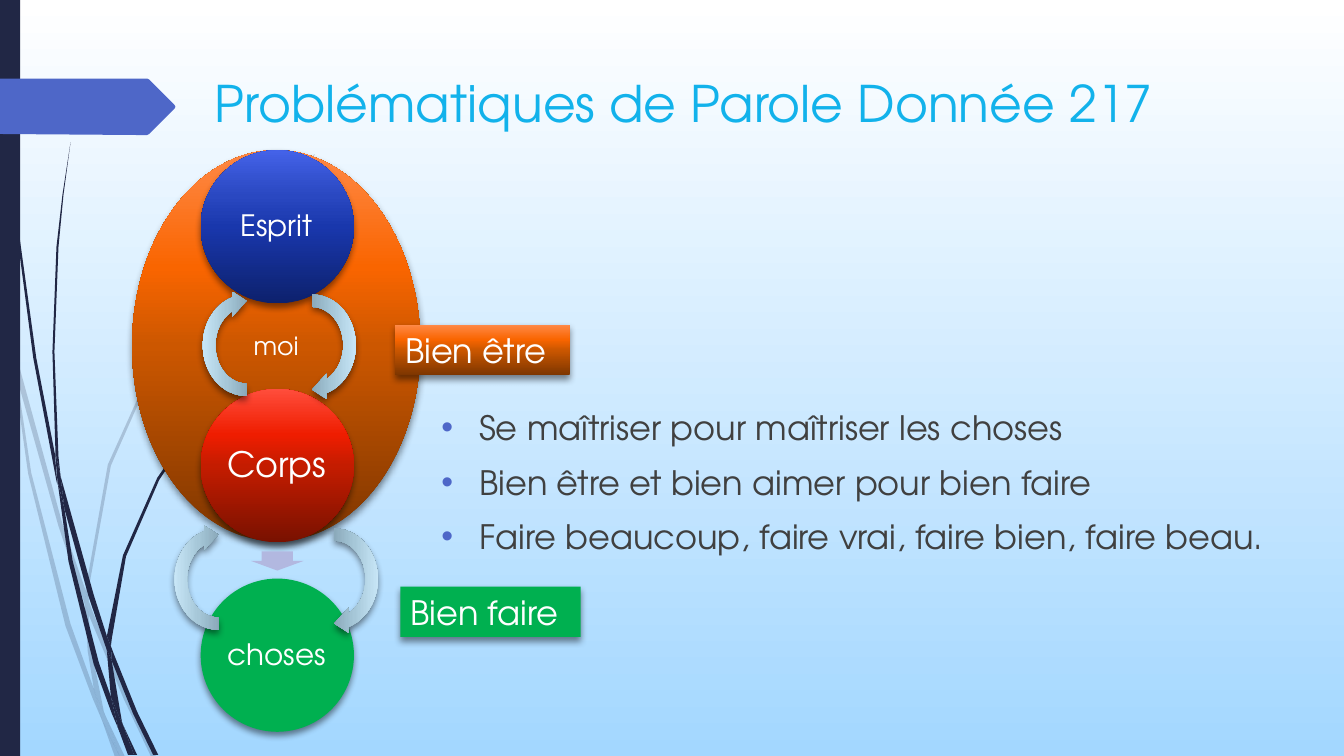
import copy

import pptx
import pptx.dml.color
import pptx.enum.shapes
import pptx.enum.text
import pptx.oxml
import pptx.oxml.ns
import pptx.util
from lxml import etree

RGB = pptx.dml.color.RGBColor
SHAPE = pptx.enum.shapes.MSO_SHAPE
ALIGN = pptx.enum.text.PP_ALIGN
ANCHOR = pptx.enum.text.MSO_ANCHOR
qn = pptx.oxml.ns.qn

PX = 9144
FONT = "TeX Gyre Adventor"
WHITE = RGB(0xFF, 0xFF, 0xFF)
SKY = RGB(0xA3, 0xD7, 0xFF)
NAVY = RGB(0x21, 0x27, 0x45)
INDIGO = RGB(0x4E, 0x67, 0xC8)
CYAN = RGB(0x12, 0xB2, 0xEB)
GREY = RGB(0x40, 0x40, 0x40)
LILAC = RGB(0xB2, 0xB8, 0xE0)
GREEN = RGB(0x00, 0xB0, 0x50)
ORANGES = [RGB(0x7E, 0x36, 0x00), RGB(0xCC, 0x57, 0x00), RGB(0xF9, 0x65, 0x00), RGB(0xFF, 0x89, 0x47)]
REDS = [RGB(0x79, 0x11, 0x00), RGB(0xC4, 0x1C, 0x00), RGB(0xEF, 0x1D, 0x00), RGB(0xFF, 0x4D, 0x3B)]
BLUES = [RGB(0x0D, 0x21, 0x6D), RGB(0x19, 0x37, 0xAC), RGB(0x2A, 0x48, 0xC1), RGB(0x44, 0x62, 0xE8)]
STEELS = [RGB(0x55, 0x6A, 0x75), RGB(0x8B, 0xAA, 0xBB), RGB(0xA6, 0xC7, 0xD8), RGB(0xD0, 0xEE, 0xFF)]
GLOSS = [0, 0.5, 0.7, 1]

PALE_BLADES = [
    [(11, 350), (9, 322), (0, 282), (0, 299), (10, 344)],
    [(58, 522), (84, 599), (85, 586), (62, 520), (14, 345), (17, 376)],
    [(92, 607), (88, 596), (88, 610), (123, 694), (150, 751), (155, 751), (127, 692)],
    [(119, 751), (124, 751), (105, 711)],
    [(93, 683), (70, 619), (31, 469), (17, 376), (11, 350), (28, 470), (65, 621), (92, 693),
     (101, 714), (99, 707)],
    [(84, 599), (87, 646), (93, 683), (96, 692), (105, 711), (103, 706), (91, 646), (88, 610), (88, 608)],
    [(88, 584), (110, 462), (160, 349), (229, 245), (268, 198), (290, 175), (312, 154), (312, 153),
     (289, 175), (268, 197), (228, 244), (158, 348), (107, 461), (85, 584), (85, 586), (88, 596)],
    [(101, 714), (114, 751), (119, 751)],
    [(88, 608), (88, 610), (88, 596), (85, 586), (84, 599)],
    [(96, 692), (93, 683), (99, 707), (101, 714), (119, 751), (105, 711)],
]
DARK_BLADES = [
    [(7, 110), (17, 233), (33, 355), (56, 477), (57, 481), (55, 457), (55, 453), (36, 355), (19, 232),
     (8, 109), (5, 48), (4, 0), (3, 0), (4, 48)],
    [(88, 592), (106, 645), (106, 631), (93, 590), (60, 472), (64, 505)],
    [(113, 649), (110, 641), (111, 656), (132, 708), (152, 749), (157, 749), (136, 706)],
    [(110, 691), (98, 657), (72, 556), (64, 505), (57, 477), (68, 557), (93, 659), (111, 708),
     (117, 722), (116, 717)],
    [(60, 472), (58, 453), (54, 349), (58, 245), (63, 193), (70, 141), (62, 193), (56, 245), (52, 349),
     (55, 449)],
    [(133, 749), (136, 749), (122, 719)],
    [(57, 477), (64, 505), (60, 472), (55, 449), (55, 453)],
    [(111, 633), (125, 552), (158, 476), (205, 406), (231, 374), (245, 359), (261, 344), (260, 344),
     (245, 358), (231, 373), (204, 405), (156, 474), (122, 551), (106, 631), (110, 641)],
    [(117, 722), (127, 749), (131, 749)],
    [(106, 645), (110, 691), (116, 706), (122, 719), (121, 716), (111, 656), (109, 651)],
    [(106, 645), (109, 651), (111, 656), (110, 641), (106, 631)],
    [(116, 706), (110, 691), (116, 717), (117, 722), (130, 749), (133, 749), (122, 719)],
]
TITLE_TAB = [(173, 108), (148, 133), (146, 134), (136, 134), (0, 133), (0, 78), (146, 78), (148, 79),
             (173, 104), (174, 106)]


def write(tf, text, size=24, color=WHITE, align=ALIGN.LEFT, anchor=ANCHOR.TOP,
          inset=None, spacing=None, before=None, bullet=None):
    tf.word_wrap = True
    tf.auto_size = pptx.enum.text.MSO_AUTO_SIZE.NONE
    tf.vertical_anchor = anchor
    if inset is not None:
        tf.margin_left = tf.margin_right = tf.margin_top = tf.margin_bottom = inset * PX
    for i, line in enumerate(text.split("\n")):
        p = tf.add_paragraph() if i else tf.paragraphs[0]
        p.alignment = align
        if spacing:
            p.line_spacing = spacing
        if before:
            p.space_before = pptx.util.Pt(before)
        if bullet is not None:
            pPr = p._p.get_or_add_pPr()
            pPr.set("marL", str(pptx.util.Pt(27)))
            pPr.set("indent", str(-pptx.util.Pt(27)))
            clr = etree.SubElement(pPr, qn("a:buClr"))
            etree.SubElement(clr, qn("a:srgbClr"), val=str(bullet))
            etree.SubElement(pPr, qn("a:buFont"), typeface="Arial")
            etree.SubElement(pPr, qn("a:buChar"), char="•")
        r = p.add_run()
        r.text = line
        r.font.name = FONT
        r.font.size = pptx.util.Pt(size)
        r.font.color.rgb = color


def gradient(fill, root, colors, places, angle):
    fill.gradient()
    fill.gradient_angle = angle
    last = list(root.iter(qn("a:gs")))[-1]
    for _ in colors[2:]:
        last.addnext(copy.deepcopy(last))
    for stop, color, place in zip(fill.gradient_stops, colors, places):
        stop.color.rgb = color
        stop.position = place


class Slide:
    def __init__(self, prs):
        self.s = prs.slides.add_slide(prs.slide_layouts[5])
        gradient(self.s.background.fill, self.s._element, [WHITE, SKY], [0, 1], 270)

    def title(self, text, x, y, w, h, **fmt):
        sp = self.s.shapes.title
        sp.left, sp.top, sp.width, sp.height = (v * PX for v in (x, y, w, h))
        write(sp.text_frame, text, **fmt)

    def text(self, text, x, y, w, h, **fmt):
        sp = self.s.shapes.add_textbox(*(v * PX for v in (x, y, w, h)))
        write(sp.text_frame, text, **fmt)

    def paint(self, sp, fill, shadow=False, alpha=None):
        if isinstance(fill, list):
            gradient(sp.fill, sp._element, fill, GLOSS, 90)
        else:
            sp.fill.solid()
            sp.fill.fore_color.rgb = fill
        sp.line.fill.background()
        sp.shadow.inherit = False
        if alpha:
            clr = sp._element.spPr.find(qn("a:solidFill"))[0]
            etree.SubElement(clr, qn("a:alpha"), val=str(alpha * 1000))
        if shadow:
            effects = sp._element.spPr.find(qn("a:effectLst"))
            shade = etree.SubElement(effects, qn("a:outerShdw"), blurRad="63500", dist="38100",
                                     dir="5400000", rotWithShape="0")
            clr = etree.SubElement(shade, qn("a:srgbClr"), val="000000")
            etree.SubElement(clr, qn("a:alpha"), val="45000")

    def shape(self, kind, x, y, w, h, fill, text=None, shadow=True, rot=0, adj=(), **fmt):
        sp = self.s.shapes.add_shape(kind, *(v * PX for v in (x, y, w, h)))
        sp.rotation = rot
        for i, value in enumerate(adj):
            sp.adjustments[i] = value
        self.paint(sp, fill, shadow)
        if text:
            write(sp.text_frame, text, **fmt)

    def outline(self, points, fill, alpha=None):
        builder = self.s.shapes.build_freeform(*points[0], scale=PX)
        builder.add_line_segments(points[1:], close=True)
        self.paint(builder.convert_to_shape(), fill, alpha=alpha)


def main():
    prs = pptx.Presentation()
    prs.slide_width, prs.slide_height = 1333 * PX, 750 * PX
    s = Slide(prs)

    for points in PALE_BLADES:
        s.outline(points, NAVY, alpha=20)
    for points in DARK_BLADES:
        s.outline(points, NAVY)
    s.shape(SHAPE.RECTANGLE, 0, 0, 20, 750, NAVY, shadow=False)
    s.outline(TITLE_TAB, INDIGO)

    s.title("Problématiques de Parole Donnée 217", 203, 67, 975, 140, size=36, color=CYAN)
    s.text("Se maîtriser pour maîtriser les choses\n"
           "Bien être et bien aimer pour bien faire\n"
           "Faire beaucoup, faire vrai, faire bien, faire beau.",
           428, 399, 867, 156, color=GREY, before=10, bullet=INDIGO)

    centred = dict(align=ALIGN.CENTER, anchor=ANCHOR.MIDDLE)
    s.shape(SHAPE.OVAL, 131, 149, 286, 388, ORANGES, "moi", size=18, **centred)
    for label, y, fill, size in [("Corps", 386, REDS, 25), ("Esprit", 149, BLUES, 21),
                                 ("choses", 574, GREEN, 21)]:
        s.shape(SHAPE.OVAL, 199, y, 152, 152, fill)
        s.text(label, 221, y + 23, 107, 107, size=size, inset=3, spacing=0.9, **centred)
    s.shape(SHAPE.DOWN_ARROW, 249, 547, 52, 19, LILAC, shadow=False, adj=[0.6, 0.5])
    for x, y, rot in [(188, 293, 270), (160, 525, 270), (253, 293, 90), (275, 525, 90)]:
        s.shape(SHAPE.CIRCULAR_ARROW, x, y, 113, 99, STEELS, rot=rot)

    s.shape(SHAPE.RECTANGLE, 392, 322, 173, 50, ORANGES, "Bien être")
    s.shape(SHAPE.RECTANGLE, 397, 582, 179, 50, GREEN, "Bien faire")
    prs.save("out.pptx")


if __name__ == "__main__":
    main()
